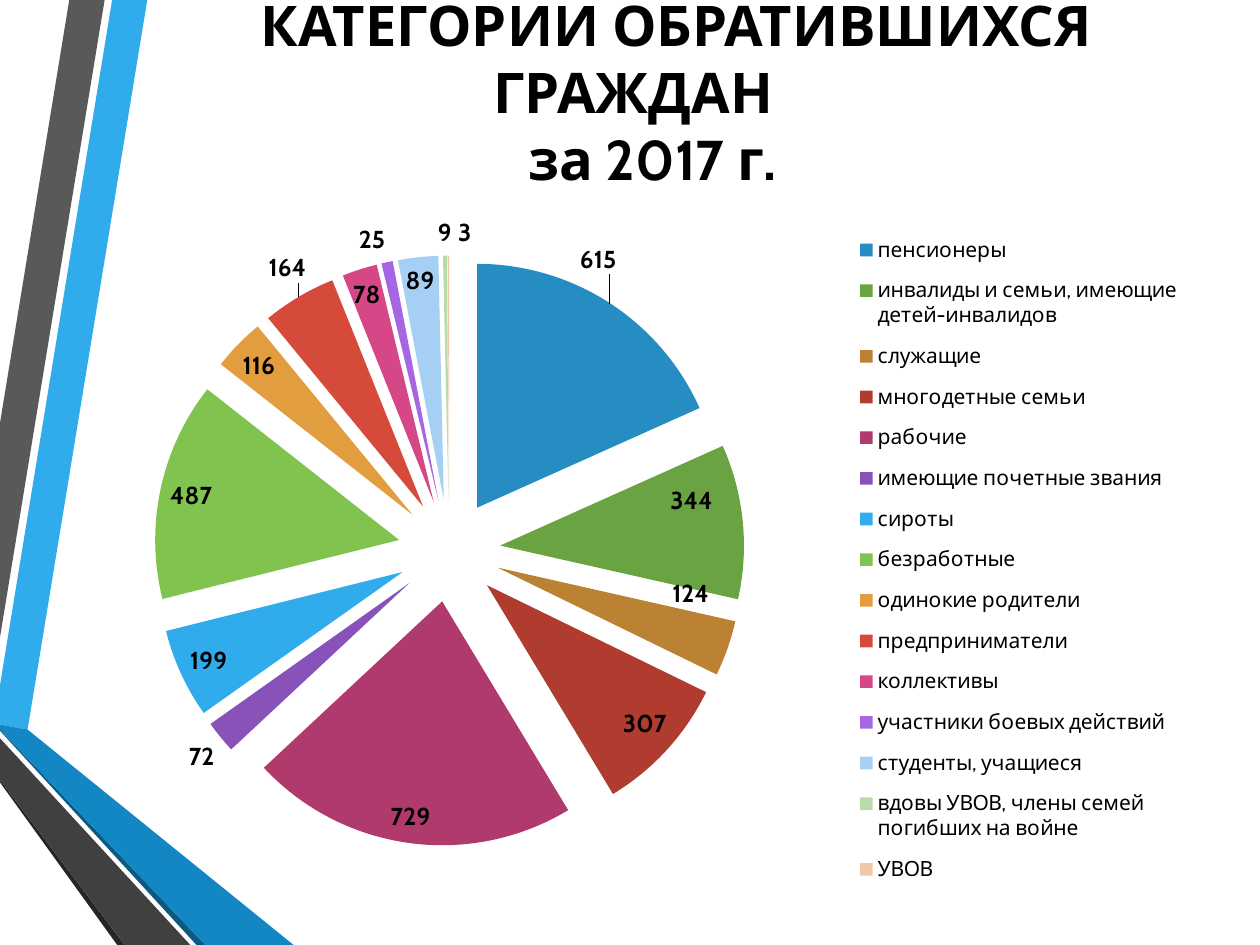
from lxml import etree
from pptx import Presentation
from pptx.chart.data import CategoryChartData
from pptx.dml.color import RGBColor
from pptx.enum.chart import XL_CHART_TYPE, XL_LABEL_POSITION, XL_LEGEND_POSITION
from pptx.enum.text import MSO_ANCHOR, MSO_AUTO_SIZE, PP_ALIGN
from pptx.oxml.ns import qn
from pptx.util import Pt

PIE = XL_CHART_TYPE.PIE
BEST_FIT = XL_LABEL_POSITION.BEST_FIT
INSIDE_END = XL_LABEL_POSITION.INSIDE_END
OUTSIDE_END = XL_LABEL_POSITION.OUTSIDE_END
LEGEND_RIGHT = XL_LEGEND_POSITION.RIGHT
MIDDLE = MSO_ANCHOR.MIDDLE
NO_AUTOFIT = MSO_AUTO_SIZE.NONE
CENTER = PP_ALIGN.CENTER

FONT = "Cabin"
EXPLOSION = 21


def color(value):
    return RGBColor.from_string(value)


def add_layout(layout, values):
    """Fill a c:layout element with a manual layout."""
    manual = etree.SubElement(layout, qn("c:manualLayout"))
    for name, value in values.items():
        etree.SubElement(manual, qn(f"c:{name}")).set("val", str(value))


presentation = Presentation()
presentation.slide_width, presentation.slide_height = Pt(720), Pt(540)
slide = presentation.slides.add_slide(presentation.slide_layouts[5])

# Ribbons along the left edge
ribbons = [
    ("30ACEC", [(0, 391.7), (0, 414), (15.8, 416.9), (84.2, 0), (64.1, 0)]),
    ("595959", [(59.8, 0), (39.6, 0), (0, 241.9), (0, 364.3)]),
    ("262626", [(0, 445.7), (0, 447.1), (67, 540), (71.3, 540)]),
    ("0C5A82", [(0, 416.9), (0, 417.6), (112.3, 540), (117.4, 540)]),
    ("1287C3", [(0, 416.9), (117.4, 540), (167.8, 540), (15.8, 416.9), (0, 414)]),
    ("404040", [(0, 445.7), (71.3, 540), (108.7, 540), (0, 421.9)]),
]
for fill, corners in ribbons:
    points = [(Pt(x), Pt(y)) for x, y in corners]
    builder = slide.shapes.build_freeform(*points[0])
    builder.add_line_segments(points[1:], close=True)
    ribbon = builder.convert_to_shape()
    ribbon.shadow.inherit = False
    ribbon.fill.solid()
    ribbon.fill.fore_color.rgb = color(fill)
    ribbon.line.fill.background()

# Title
title = slide.shapes.title
title.left, title.top, title.width, title.height = Pt(31), Pt(9.4), Pt(669), Pt(85)
frame = title.text_frame
frame.word_wrap = True
frame.auto_size = NO_AUTOFIT
frame.vertical_anchor = MIDDLE
frame.text = "КАТЕГОРИИ ОБРАТИВШИХСЯ ГРАЖДАН \nза 2017 г."
for paragraph, indent in zip(frame.paragraphs, (42, 15)):
    paragraph.alignment = CENTER
    paragraph.line_spacing = 1.0
    paragraph.space_before = Pt(0)
    paragraph._p.get_or_add_pPr().set("indent", str(Pt(indent)))
    for name, value in {"name": FONT, "size": Pt(32), "bold": True}.items():
        setattr(paragraph.runs[0].font, name, value)
    paragraph.runs[0].font.color.rgb = color("000000")

# Pie chart: category, value, slice colour
categories = [
    ("пенсионеры", 615, "268DC3"),
    ("инвалиды и семьи, имеющие детей-инвалидов", 344, "6AA342"),
    ("служащие", 124, "BA8232"),
    ("многодетные семьи", 307, "B03C30"),
    ("рабочие", 729, "B03A6D"),
    ("имеющие почетные звания", 72, "8852B9"),
    ("сироты", 199, "30ACEC"),
    ("безработные", 487, "80C34F"),
    ("одинокие родители", 116, "E29D3E"),
    ("предприниматели", 164, "D64A3B"),
    ("коллективы", 78, "D64787"),
    ("участники боевых действий", 25, "A666E1"),
    ("студенты, учащиеся", 89, "A5CFF3"),
    ("вдовы УВОВ, члены семей погибших на войне", 9, "B8DCA8"),
    ("УВОВ", 3, "F0C8A8"),
]
chart_data = CategoryChartData()
chart_data.categories = [name for name, _, _ in categories]
chart_data.add_series("Series 1", [value for _, value, _ in categories])
chart = slide.shapes.add_chart(
    PIE, Pt(40.3), Pt(105.8), Pt(645), Pt(420), chart_data).chart
chart.has_title = False
chart.font.name = FONT
chart.font.size = Pt(10)
chart.font.color.rgb = color("000000")
chart.has_legend = True
legend = chart.legend
legend.position = LEGEND_RIGHT
legend.include_in_layout = False
legend.font.size = Pt(12)
legend.font.name = FONT
legend_layout = legend._element.find(qn("c:layout"))
if legend_layout is None:
    legend_layout = etree.Element(qn("c:layout"))
    legend._element.find(qn("c:legendPos")).addnext(legend_layout)
add_layout(legend_layout, {"xMode": "edge", "yMode": "edge",
                           "x": 0.69, "y": 0.05, "w": 0.3, "h": 0.92})

plot = chart.plots[0]
plot.vary_by_categories = True
plot_area = chart._chartSpace.chart.plotArea
layout = plot_area.find(qn("c:layout"))
if layout is None:
    layout = etree.Element(qn("c:layout"))
    plot_area.insert(0, layout)
add_layout(layout, {"layoutTarget": "inner", "xMode": "edge", "yMode": "edge",
                    "x": 0.017, "y": 0.096, "w": 0.637, "h": 0.803})

series = plot.series[0]
for index, (_, _, fill) in enumerate(categories):
    point_fill = series.points[index].format.fill
    point_fill.solid()
    point_fill.fore_color.rgb = color(fill)
explosion = etree.Element(qn("c:explosion"))
explosion.set("val", str(EXPLOSION))
series._element.find(qn("c:dPt")).addprevious(explosion)
for point in series._element.findall(qn("c:dPt")):
    point_explosion = etree.Element(qn("c:explosion"))
    point_explosion.set("val", str(EXPLOSION))
    point.find(qn("c:spPr")).addprevious(point_explosion)

labels = series.data_labels
labels.show_value = True
labels.position = BEST_FIT
label_font = {"name": FONT, "size": Pt(14), "bold": True}
for name, value in label_font.items():
    setattr(labels.font, name, value)
labels.font.color.rgb = color("000000")

# Labels moved by hand: point, base position, offset as a share of the chart
moved_labels = [
    (0, OUTSIDE_END, -0.03, -0.03),
    (1, INSIDE_END, -0.02, -0.05),
    (2, INSIDE_END, -0.01, -0.05),
    (9, OUTSIDE_END, 0.01, -0.01),
]
for index, position, x, y in moved_labels:
    label = series.points[index].data_label
    label.position = position
    for name, value in label_font.items():
        setattr(label.font, name, value)
    layout = etree.Element(qn("c:layout"))
    add_layout(layout, {"x": x, "y": y})
    for element in labels._element.findall(qn("c:dLbl")):
        if element.find(qn("c:idx")).get("val") == str(index):
            element.find(qn("c:idx")).addnext(layout)

presentation.save("out.pptx")
